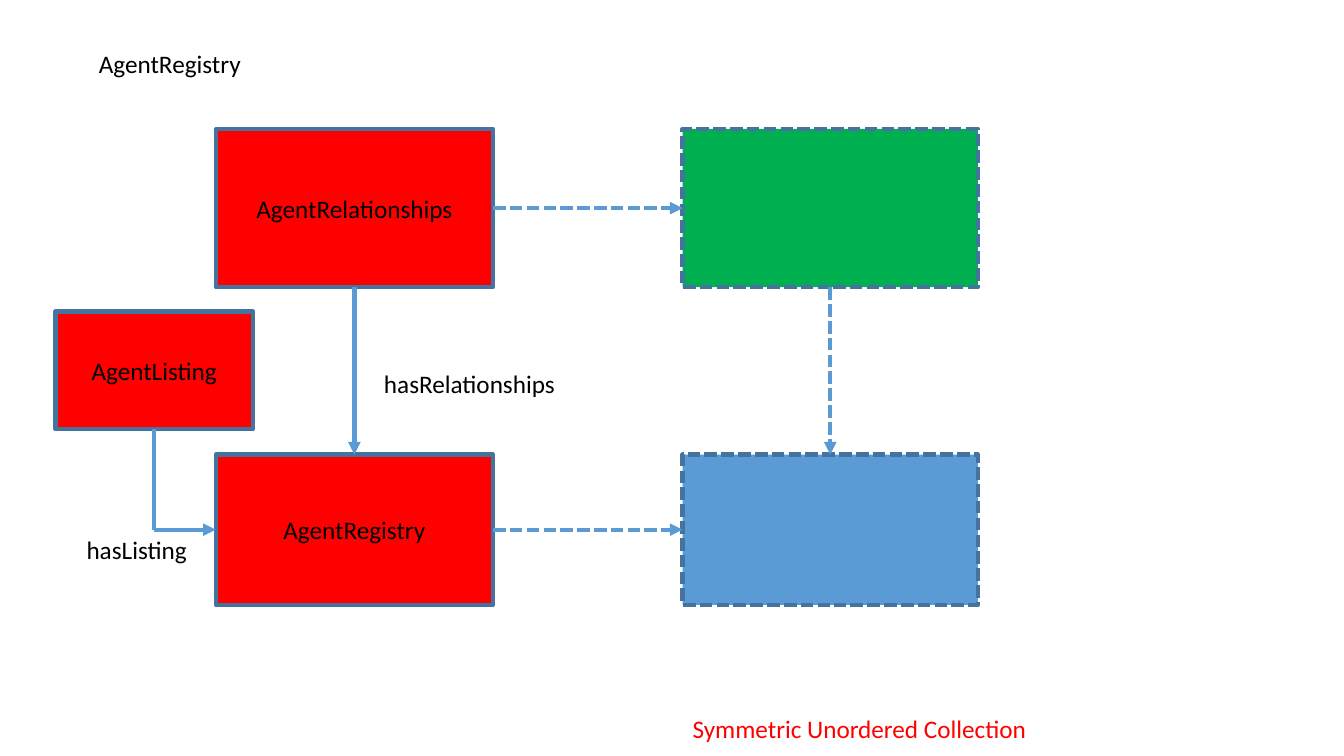
from pptx import Presentation
from pptx.dml.color import RGBColor
from pptx.enum.dml import MSO_LINE
from pptx.enum.shapes import MSO_CONNECTOR, MSO_SHAPE
from pptx.enum.text import MSO_ANCHOR, MSO_AUTO_SIZE, PP_ALIGN
from pptx.oxml.ns import qn
from pptx.util import Inches, Pt
from lxml.etree import SubElement

COLORS = {"red": "FF0000", "green": "00B050", "blue": "5B9BD5",
          "border": "43739E", "black": "000000"}
TOP, LEFT, BOTTOM, RIGHT = range(4)


def rgb(name):
    """Return the named colour."""
    return RGBColor.from_string(COLORS[name])


def style_line(line, color, dashed):
    """Give a line its colour, width and dash."""
    line.color.rgb = rgb(color)
    line.width = Pt(3)
    if dashed:
        line.dash_style = MSO_LINE.SQUARE_DOT


def write(tf, text, align, color="black"):
    """Write one run of text into a frame."""
    p = tf.paragraphs[0]
    p.alignment = align
    r = p.add_run()
    r.text = text
    r.font.name = "Calibri"
    r.font.size = Pt(18)
    r.font.color.rgb = rgb(color)


def add_box(s, x, y, w, h, fill, text="", dashed=False):
    """Add a bordered rectangle with optional centred text."""
    sp = s.shapes.add_shape(MSO_SHAPE.RECTANGLE, Inches(x), Inches(y), Inches(w), Inches(h))
    sp.shadow.inherit = False
    sp.fill.solid()
    sp.fill.fore_color.rgb = rgb(fill)
    style_line(sp.line, "border", dashed)
    if text:
        sp.text_frame.vertical_anchor = MSO_ANCHOR.MIDDLE
        write(sp.text_frame, text, PP_ALIGN.CENTER)
    return sp


def add_line(s, x1, y1, x2, y2, dashed=False, arrow=True):
    """Add a straight line, with an arrowhead at its end unless told otherwise."""
    c = s.shapes.add_connector(MSO_CONNECTOR.STRAIGHT, x1, y1, x2, y2)
    style_line(c.line, "blue", dashed)
    if arrow:
        SubElement(c.line._get_or_add_ln(), qn("a:tailEnd"), type="triangle")
    SubElement(c._element.spPr, qn("a:effectLst"))
    return c


def link(s, source, source_site, target, target_site, dashed=False):
    """Join two boxes with an arrow glued to their sides."""
    c = add_line(s, 0, 0, 0, 0, dashed)
    c.begin_connect(source, source_site)
    c.end_connect(target, target_site)


def fill_label(sp, text, color="black"):
    """Format a text shape as an unwrapped label."""
    tf = sp.text_frame
    tf.word_wrap = False
    tf.auto_size = MSO_AUTO_SIZE.SHAPE_TO_FIT_TEXT
    tf.vertical_anchor = MSO_ANCHOR.TOP
    write(tf, text, PP_ALIGN.LEFT, color)


def add_label(s, x, y, w, text, color="black"):
    """Add a free-standing label."""
    sp = s.shapes.add_textbox(Inches(x), Inches(y), Inches(w), Inches(0.4))
    fill_label(sp, text, color)


def set_title(s, x, y, w, text):
    """Place and fill the title."""
    sp = s.shapes.title
    sp.left, sp.top, sp.width, sp.height = Inches(x), Inches(y), Inches(w), Inches(0.4)
    fill_label(sp, text)


def main():
    """Build the agent registry diagram."""
    prs = Presentation()
    prs.slide_width, prs.slide_height = Inches(13.33), Inches(7.5)
    s = prs.slides.add_slide(prs.slide_layouts[5])
    set_title(s, 0.88, 0.43, 1.62, "AgentRegistry")

    relationships = add_box(s, 2.14, 1.28, 2.75, 1.57, "red", "AgentRelationships")
    registry = add_box(s, 2.14, 4.51, 2.75, 1.49, "red", "AgentRegistry")
    blue_box = add_box(s, 6.77, 4.51, 2.93, 1.49, "blue", dashed=True)
    green_box = add_box(s, 6.77, 1.28, 2.93, 1.57, "green", dashed=True)
    listing = add_box(s, 0.55, 3.09, 1.96, 1.17, "red", "AgentListing")

    link(s, relationships, BOTTOM, registry, TOP)
    link(s, registry, RIGHT, blue_box, LEFT, dashed=True)
    link(s, green_box, BOTTOM, blue_box, TOP, dashed=True)
    link(s, relationships, RIGHT, green_box, LEFT, dashed=True)

    corner_x = listing.left + listing.width // 2
    corner_y = registry.top + registry.height // 2
    add_line(s, corner_x, corner_y, registry.left, corner_y)
    add_line(s, corner_x, listing.top + listing.height, corner_x, corner_y, arrow=False)

    add_label(s, 3.71, 3.61, 1.92, "hasRelationships")
    add_label(s, 0.76, 5.25, 1.21, "hasListing")
    add_label(s, 6.77, 7.03, 3.61, "Symmetric Unordered Collection", "red")
    prs.save("out.pptx")


if __name__ == "__main__":
    main()
